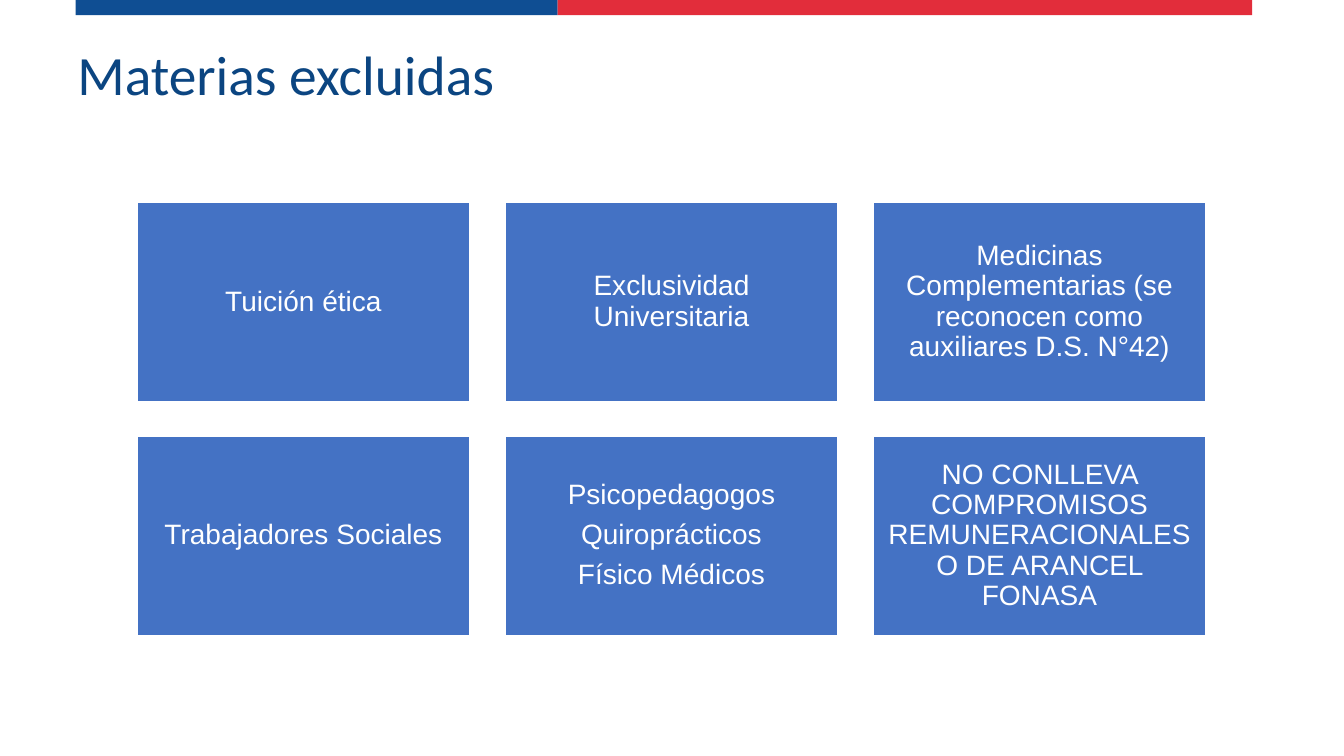
import pptx
import pptx.util
import pptx.dml.color
import pptx.enum.shapes
import pptx.enum.text

Inches, Pt = pptx.util.Inches, pptx.util.Pt
ALIGN = pptx.enum.text.PP_ALIGN

TITLE = "Materias excluidas"
TOPICS = [
    ["Tuición ética"],
    ["Exclusividad Universitaria"],
    ["Medicinas Complementarias (se reconocen como auxiliares D.S. N°42)"],
    ["Trabajadores Sociales"],
    ["Psicopedagogos", "Quiroprácticos", "Físico Médicos"],
    ["NO CONLLEVA COMPROMISOS REMUNERACIONALES O DE ARANCEL FONASA"],
]
COLORS = {
    "band_blue": "0F4E93",
    "band_red": "E22D3B",
    "title": "0B4581",
    "box": "4472C4",
    "white": "FFFFFF",
}
BANDS = [(0.75, 4.78, "band_blue"), (5.53, 6.89, "band_red")]  # left, width, colour
BAND_HEIGHT = 0.15

COLUMNS = 3
GRID_LEFT, GRID_TOP = 1.35, 2
BOX_WIDTH, BOX_HEIGHT = 3.32, 1.99
GAP = 0.33


def rgb(name):
    return pptx.dml.color.RGBColor.from_string(COLORS[name])


def add_rect(slide, left, top, width, height, fill):
    sp = slide.shapes.add_shape(
        pptx.enum.shapes.MSO_SHAPE.RECTANGLE,
        Inches(left), Inches(top), Inches(width), Inches(height))
    sp.shadow.inherit = False
    sp.fill.solid()
    sp.fill.fore_color.rgb = rgb(fill)
    sp.line.fill.background()
    return sp


def set_text(sp, lines, size, font, color, align, space_after=0):
    tf = sp.text_frame
    tf.word_wrap = True
    tf.vertical_anchor = pptx.enum.text.MSO_ANCHOR.MIDDLE
    tf.text = "\n".join(lines)
    for p in tf.paragraphs:
        p.alignment = align
        p.line_spacing = 0.9
        p.space_after = Pt(space_after)
        for r in p.runs:
            r.font.size = Pt(size)
            r.font.name = font
            r.font.color.rgb = rgb(color)


def add_topic(slide, index, lines):
    row, column = divmod(index, COLUMNS)
    sp = add_rect(slide, GRID_LEFT + column * (BOX_WIDTH + GAP),
                  GRID_TOP + row * (BOX_HEIGHT + GAP),
                  BOX_WIDTH, BOX_HEIGHT, "box")
    sp.line.color.rgb = rgb("white")
    sp.line.width = Pt(2)
    tf = sp.text_frame
    tf.margin_left = tf.margin_right = Inches(0.08)
    tf.margin_top = tf.margin_bottom = Inches(0.08)
    set_text(sp, lines, 20, "Arial", "white", ALIGN.CENTER, space_after=7)


def main():
    prs = pptx.Presentation()
    prs.slide_width, prs.slide_height = Inches(13.33), Inches(7.5)
    slide = prs.slides.add_slide(prs.slide_layouts[6])

    for left, width, color in BANDS:
        add_rect(slide, left, 0, width, BAND_HEIGHT, color)

    title = slide.shapes.add_textbox(
        Inches(0.67), Inches(0.47), Inches(9.39), Inches(0.6))
    set_text(title, [TITLE], 39.6, "Calibri", "title", ALIGN.LEFT)

    for index, lines in enumerate(TOPICS):
        add_topic(slide, index, lines)

    prs.save("out.pptx")


if __name__ == "__main__":
    main()
